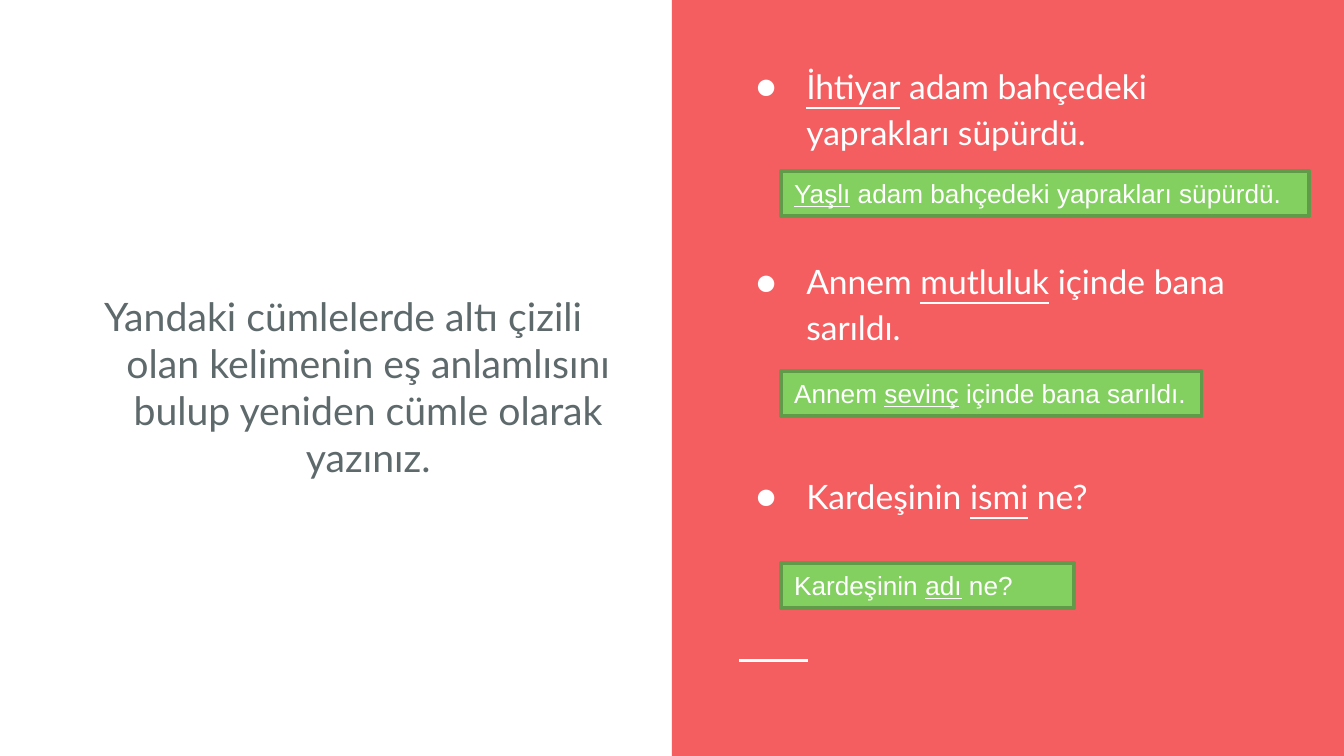
from dataclasses import dataclass

from lxml.etree import SubElement as Sub
from pptx import Presentation
from pptx.dml.color import RGBColor as Rgb
from pptx.enum.shapes import MSO_CONNECTOR as Link, MSO_SHAPE as Form
from pptx.enum.text import MSO_ANCHOR as Anchor, MSO_AUTO_SIZE as Fit, PP_ALIGN as Align
from pptx.oxml.ns import qn
from pptx.util import Cm, Pt

COLORS = {"white": "FFFFFF", "red": "F55E61", "green": "83D061",
          "edge": "619A48", "gray": "5E696C"}
WIDE, HIGH = 25.4, 14.29
HALF = WIDE / 2
TASK = ("Yandaki cümlelerde altı çizili olan kelimenin eş anlamlısını "
        "bulup yeniden cümle olarak yazınız.")


@dataclass
class Box:
    left: float
    top: float
    width: float
    height: float

    def size(self) -> tuple:
        return Cm(self.left), Cm(self.top), Cm(self.width), Cm(self.height)


@dataclass
class Item:
    """A sentence and its answer; underscores enclose the underlined word."""
    ask: str
    ask_top: float
    ask_high: float
    reply: str
    top: float
    width: float
    wrap: bool = False


ITEMS = [
    Item("_İhtiyar_ adam bahçedeki yaprakları süpürdü.", 0.86, 2.29,
         "_Yaşlı_ adam bahçedeki yaprakları süpürdü.", 3.23, 9.98),
    Item("Annem _mutluluk_ içinde bana sarıldı.", 4.55, 2.29,
         "Annem _sevinç_ içinde bana sarıldı.", 7.01, 7.95),
    Item("Kardeşinin _ismi_ ne?", 8.31, 2.01,
         "Kardeşinin _adı_ ne?", 10.64, 5.54, True),
]


def color(name: str) -> Rgb:
    return Rgb.from_string(COLORS[name])


def write(para, text: str, font: str, size: int, tint: str) -> None:
    for i, part in enumerate(text.split("_")):
        if part:
            run = para.add_run()
            run.text = part
            run.font.name, run.font.size = font, Pt(size)
            run.font.color.rgb = color(tint)
            run.font.underline = i % 2 == 1


def indent(para):
    props = para._p.get_or_add_pPr()
    props.set("marL", str(Cm(1.27)))
    props.set("indent", str(Cm(-0.95)))
    return props


def add_text(slide, box: Box):
    frame = slide.shapes.add_textbox(*box.size()).text_frame
    frame.word_wrap = True
    frame.margin_left = frame.margin_right = Cm(0.25)
    frame.margin_top = frame.margin_bottom = Cm(0.25)
    return frame


def add_rect(slide, box: Box, fill: str, edge: str = ""):
    rect = slide.shapes.add_shape(Form.RECTANGLE, *box.size())
    rect.shadow.inherit = False
    rect.fill.solid()
    rect.fill.fore_color.rgb = color(fill)
    if edge:
        rect.line.color.rgb = color(edge)
        rect.line.width = Pt(2)
    else:
        rect.line.fill.background()
    return rect


def add_ask(slide, item: Item) -> None:
    frame = add_text(slide, Box(13.72, item.ask_top, 10.67, item.ask_high))
    frame.vertical_anchor = Anchor.MIDDLE
    para = frame.paragraphs[0]
    para.line_spacing = 1.15
    props = indent(para)
    tint = Sub(props, qn("a:buClr"))
    Sub(tint, qn("a:srgbClr"), val=COLORS["white"])
    Sub(props, qn("a:buFont"), typeface="Lato")
    Sub(props, qn("a:buChar"), char="●")
    write(para, item.ask, "Lato", 18, "white")


def add_reply(slide, item: Item) -> None:
    rect = add_rect(slide, Box(14.76, item.top, item.width, 0.86), "green", "edge")
    frame = rect.text_frame
    frame.word_wrap = item.wrap
    frame.auto_size = Fit.SHAPE_TO_FIT_TEXT
    frame.vertical_anchor = Anchor.TOP
    para = frame.paragraphs[0]
    para.alignment = Align.LEFT
    write(para, item.reply, "Arial", 14, "white")


def main() -> None:
    deck = Presentation()
    deck.slide_width, deck.slide_height = Cm(WIDE), Cm(HIGH)
    slide = deck.slides.add_slide(deck.slide_layouts[6])

    # Right panel with its short rule
    add_rect(slide, Box(HALF, 0, HALF, HIGH), "red")
    rule = slide.shapes.add_connector(
        Link.STRAIGHT, Cm(13.97), Cm(12.49), Cm(15.27), Cm(12.49))
    rule.line.color.rgb = color("white")
    rule.line.width = Pt(1.5)
    Sub(rule._element.spPr, qn("a:effectLst"))

    # Task on the left
    para = add_text(slide, Box(0.71, 5.28, 11.23, 4.17)).paragraphs[0]
    para.alignment = Align.CENTER
    indent(para)
    write(para, TASK, "Lato", 21, "gray")

    # Sentences and answers
    for item in ITEMS:
        add_ask(slide, item)
        add_reply(slide, item)

    deck.save("out.pptx")


if __name__ == "__main__":
    main()
